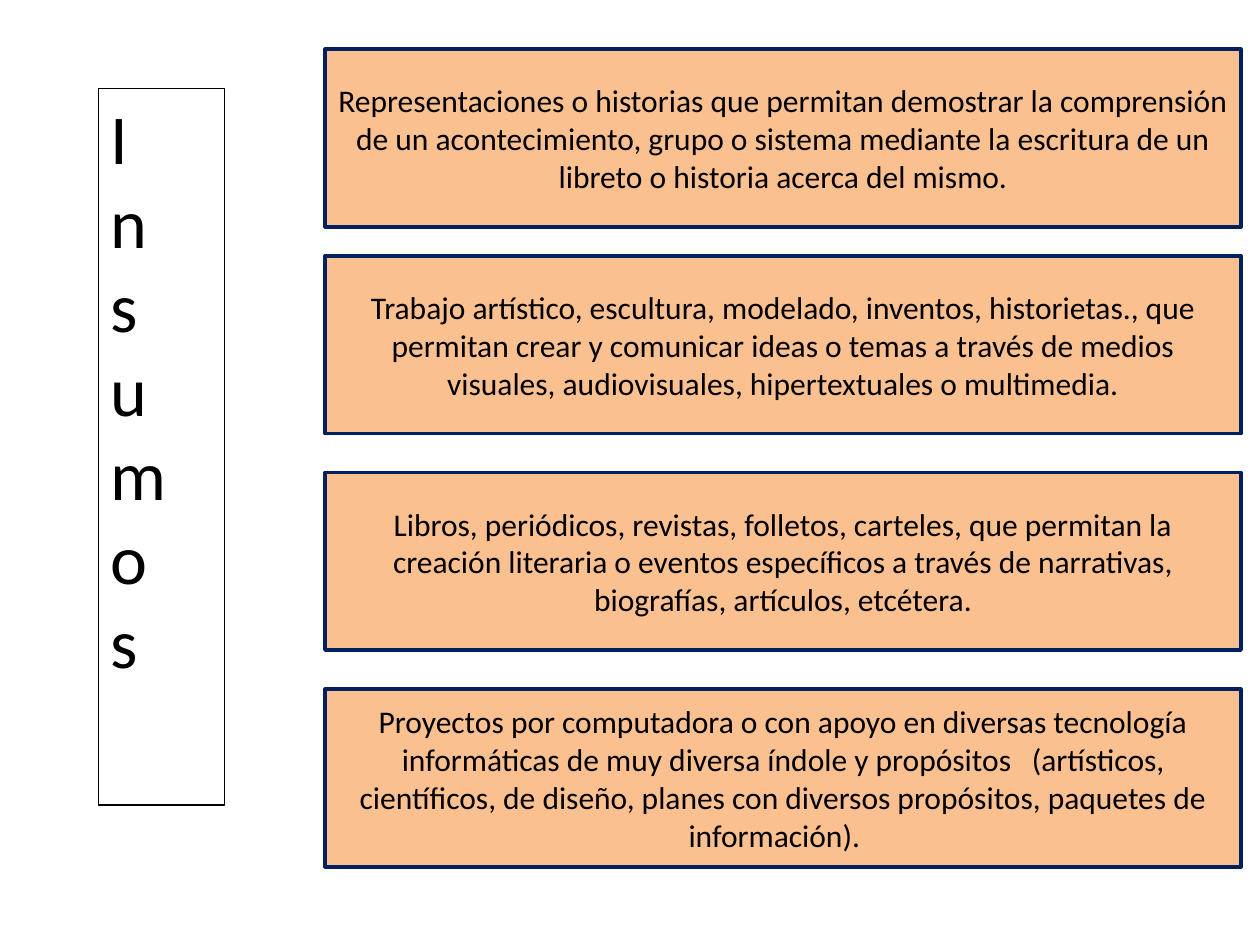
from pptx import Presentation
from pptx.dml.color import RGBColor
from pptx.enum.shapes import MSO_SHAPE
from pptx.enum.text import MSO_ANCHOR, MSO_AUTO_SIZE, PP_ALIGN
from pptx.util import Inches, Pt

COLORS = {"card": "FAC090", "edge": "002060", "ink": "000000"}

LEFT, WIDTH, HEIGHT = 2.58, 7.27, 1.41
PITCH = 1.72
TOPS = [0.39] + [2.03 + PITCH * row for row in range(3)]

CARDS = [
    "Representaciones o historias que permitan demostrar la comprensión de un "
    "acontecimiento, grupo o sistema mediante la escritura de un libreto o "
    "historia acerca del mismo.",
    "Trabajo artístico, escultura, modelado, inventos, historietas., que "
    "permitan crear y comunicar ideas o temas a través de medios visuales, "
    "audiovisuales, hipertextuales o multimedia.",
    "Libros, periódicos, revistas, folletos, carteles, que permitan la "
    "creación literaria o eventos específicos a través de narrativas, "
    "biografías, artículos, etcétera.",
    "Proyectos por computadora o con apoyo en diversas tecnología informáticas "
    "de muy diversa índole y propósitos \t(artísticos, científicos, de diseño, "
    "planes con diversos propósitos, paquetes de información).\t",
]


def tint(name):
    return RGBColor.from_string(COLORS[name])


def edge(shape, color, width):
    shape.line.color.rgb = tint(color)
    shape.line.width = Pt(width)


def write(shape, text, size, align, **frame):
    """Fill a shape with one paragraph; frame holds text frame settings."""
    body = shape.text_frame
    for key, value in frame.items():
        setattr(body, key, value)
    para = body.paragraphs[0]
    para.alignment = align
    run = para.add_run()
    run.text = text
    for key, value in {"name": "Calibri", "size": Pt(size)}.items():
        setattr(run.font, key, value)
    run.font.color.rgb = tint("ink")


def add_card(slide, top, text):
    box = [Inches(n) for n in (LEFT, top, WIDTH, HEIGHT)]
    card = slide.shapes.add_shape(MSO_SHAPE.RECTANGLE, *box)
    card.shadow.inherit = False
    card.fill.solid()
    card.fill.fore_color.rgb = tint("card")
    edge(card, "edge", 2)
    write(card, text, 18, PP_ALIGN.CENTER,
          word_wrap=True, vertical_anchor=MSO_ANCHOR.MIDDLE)


def add_banner(slide, text):
    """Add the heading whose letters stand one below the other."""
    box = [Inches(n) for n in (0.78, 0.7, 1, 5.69)]
    banner = slide.shapes.add_textbox(*box)
    edge(banner, "ink", 0.75)
    write(banner, text, 40, PP_ALIGN.LEFT,
          word_wrap=False, auto_size=MSO_AUTO_SIZE.SHAPE_TO_FIT_TEXT)
    banner.text_frame._txBody.bodyPr.set("vert", "wordArtVert")


def main():
    deck = Presentation()
    deck.slide_width, deck.slide_height = Inches(10), Inches(7.5)
    slide = deck.slides.add_slide(deck.slide_layouts[6])
    for top, text in zip(TOPS, CARDS):
        add_card(slide, top, text)
    add_banner(slide, "Insumos")
    deck.save("out.pptx")


if __name__ == "__main__":
    main()
